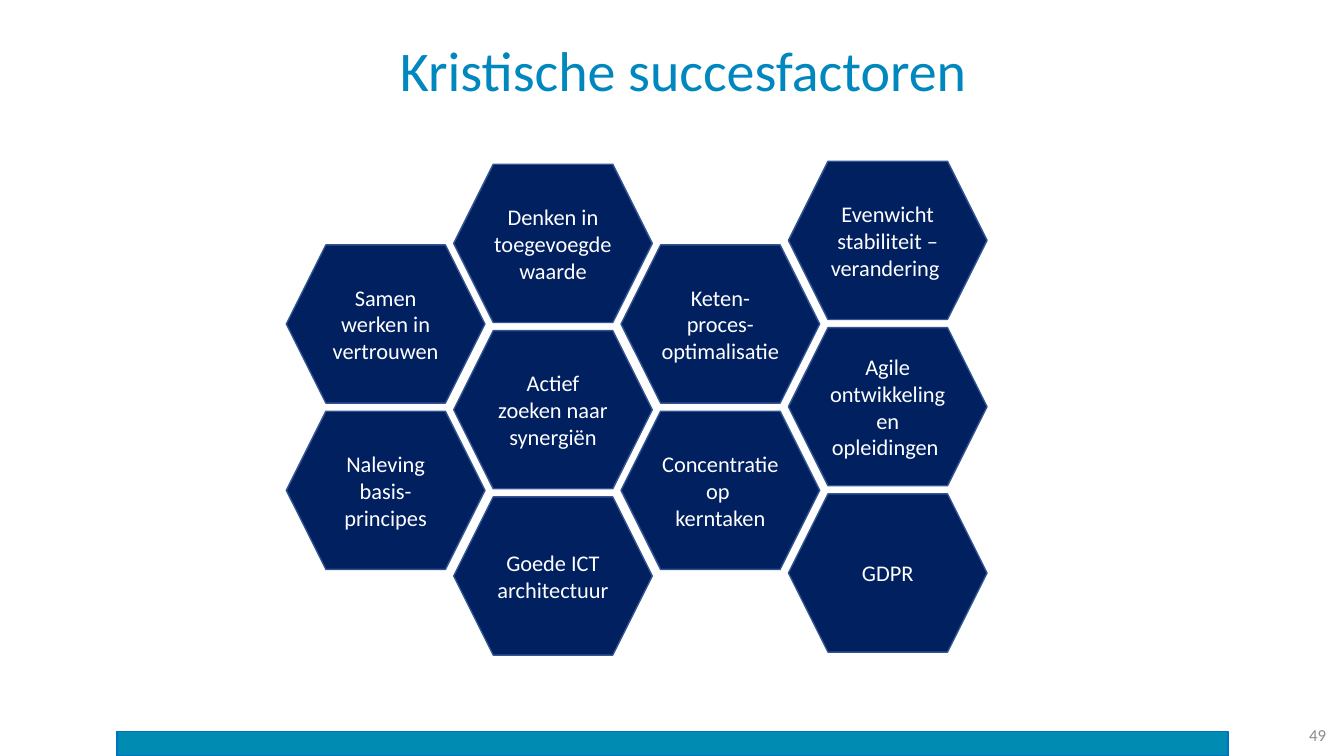
from pptx import Presentation
from pptx.dml.color import RGBColor
from pptx.enum.shapes import MSO_SHAPE as Shape
from pptx.enum.text import MSO_ANCHOR as Anchor, PP_ALIGN as Align
from pptx.util import Inches, Pt

# Content: one list of hexagons per column, each a list of paragraphs
TITLE = "Kristische succesfactoren"
PAGE = "49"
COLUMNS = [
    (2.43, [["Samen werken in vertrouwen"],
            ["Naleving basis- principes"]]),
    (1.63, [["Denken in toegevoegde waarde"],
            ["Actief zoeken naar synergiën"],
            ["Goede ICT architectuur"]]),
    (2.43, [["Keten-", "proces-", "optimalisatie "],
            ["Concentratie op ", "kerntaken"]]),
    (1.6, [["Evenwicht stabiliteit – verandering "],
           ["Agile ontwikkeling en opleidingen "],
           ["GDPR"]]),
]

# Colours and honeycomb measures in inches
NAVY = RGBColor(0x00, 0x20, 0x60)
EDGE = RGBColor(0x32, 0x54, 0x91)
TEAL = RGBColor(0x00, 0x8C, 0xB2)
BLUE = RGBColor(0x00, 0x70, 0xC0)
HEAD = RGBColor(0x00, 0x87, 0xBE)
GREY = RGBColor(0x8C, 0x8C, 0x8C)
WHITE = RGBColor(0xFF, 0xFF, 0xFF)
FONT = "Calibri"
LEFT, STEP_X, STEP_Y = 2.84, 1.66, 1.65
HEX_W, HEX_H = 1.97, 1.57

deck = Presentation()
deck.slide_width, deck.slide_height = Inches(13.33), Inches(7.5)
slide = deck.slides.add_slide(deck.slide_layouts[5])


def write(shape, lines, size, color, align):
    frame = shape.text_frame
    frame.word_wrap = True
    frame.vertical_anchor = Anchor.MIDDLE
    for i, line in enumerate(lines):
        para = frame.add_paragraph() if i else frame.paragraphs[0]
        para.alignment = align
        run = para.add_run()
        run.text = line
        run.font.name, run.font.size = FONT, Pt(size)
        run.font.color.rgb = color


def draw(kind, box, fill, edge):
    shape = slide.shapes.add_shape(kind, *map(Inches, box))
    shape.shadow.inherit = False
    shape.fill.solid()
    shape.fill.fore_color.rgb = fill
    shape.line.color.rgb = edge
    shape.line.width = Pt(1)
    return shape


# Footer bar and page number
draw(Shape.RECTANGLE, (1.16, 7.26, 11.02, 0.24), TEAL, BLUE)
number = slide.shapes.add_textbox(*map(Inches, (12.43, 7.09, 0.82, 0.4)))
write(number, [PAGE], 12, GREY, Align.RIGHT)

# Title
title = slide.shapes.title
title.left, title.top = Inches(0.72), Inches(0.28)
title.width, title.height = Inches(12.11), Inches(0.9)
write(title, [TITLE], 40, HEAD, Align.CENTER)
title.text_frame.paragraphs[0].line_spacing = 0.9

# Honeycomb
for col, (top, cells) in enumerate(COLUMNS):
    for row, lines in enumerate(cells):
        box = (LEFT + col * STEP_X, top + row * STEP_Y, HEX_W, HEX_H)
        cell = draw(Shape.HEXAGON, box, NAVY, EDGE)
        write(cell, lines, 16, WHITE, Align.CENTER)

deck.save("out.pptx")
